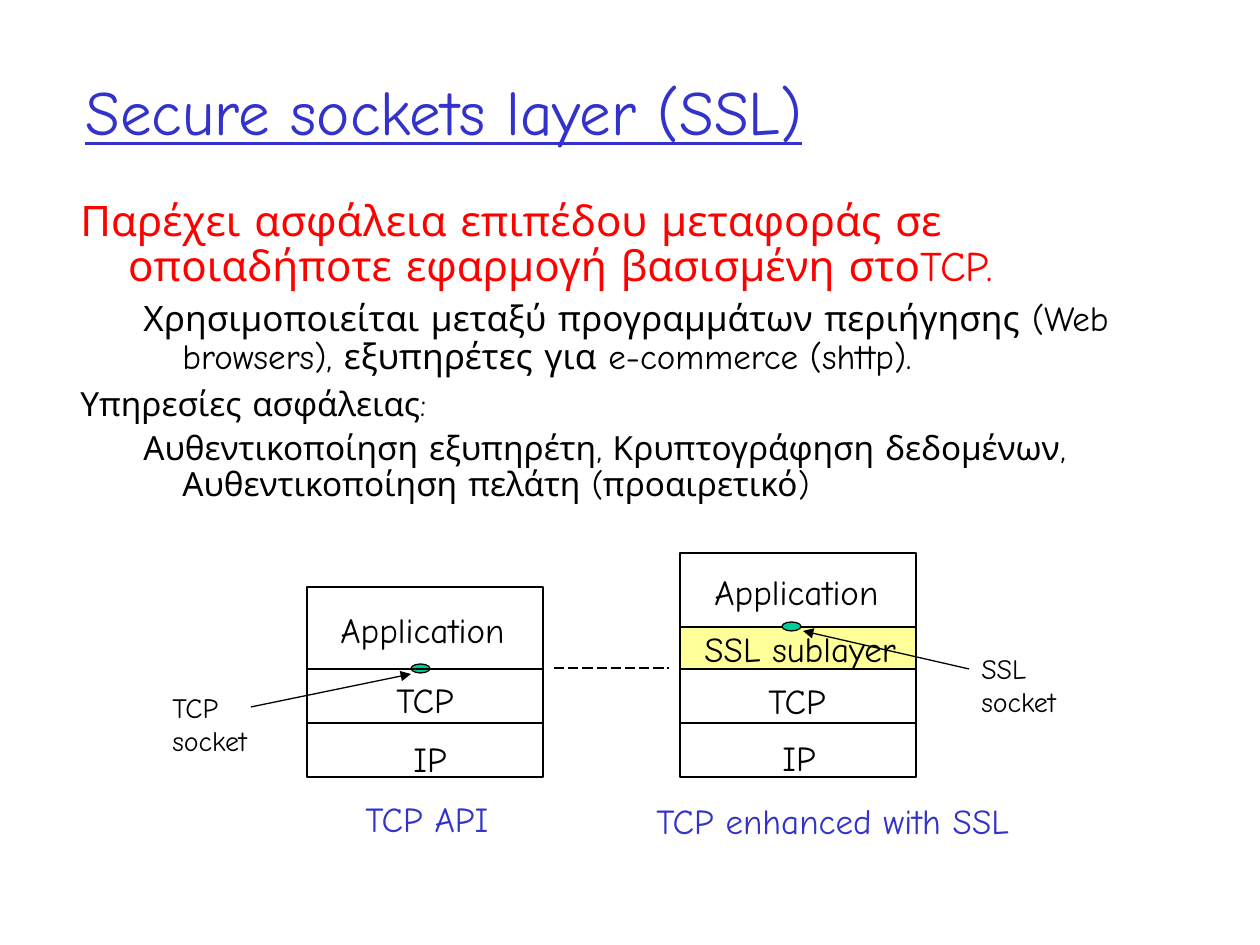
from lxml import etree
from pptx import Presentation, util as u
from pptx.dml.color import RGBColor
from pptx.enum import dml, shapes, text
from pptx.oxml.ns import qn

PX = 914400 // 126
FONT = "Comic Neue"
BLACK, BLUE, RED = "000000", "3333CC", "FF0000"
YELLOW, GREEN = "FFFF99", "00CC99"

TITLE = "Secure sockets layer (SSL)"
# wording, level, size, colour, space before
BODY = [
    ("Παρέχει ασφάλεια επιπέδου μεταφοράς σε οποιαδήποτε εφαρμογή "
     "βασισμένη στοTCP.", 0, 24, RED, 7),
    ("Χρησιμοποιείται μεταξύ προγραμμάτων περιήγησης (Web browsers), "
     "εξυπηρέτες για e-commerce (shttp).", 1, 20, BLACK, 6),
    ("Υπηρεσίες ασφάλειας:", 0, 19, BLACK, 6),
    ("Αυθεντικοποίηση εξυπηρέτη, Κρυπτογράφηση δεδομένων, "
     "Αυθεντικοποίηση πελάτη (προαιρετικό)", 1, 19, BLACK, 5),
]
INDENTS = [(0.38, -0.38), (0.81, -0.31)]  # left margin, first line, by level

# layer name, height, fill, place and width of its label
PLAIN = [
    ("Application", 82, None, (328, 602, 206)),
    ("TCP", 54, None, (384, 672, 88)),
    ("IP", 54, None, (401, 731, 63)),
]
SECURE = [
    ("Application", 74, None, (702, 564, 206)),
    ("SSL sublayer", 42, YELLOW, (692, 621, 242)),
    ("TCP", 54, None, (756, 673, 88)),
    ("IP", 54, None, (770, 730, 63)),
]
STACK_W, STACK_END = 236, 777
NOTES = [  # wording, left, top, width, size, colour
    ("TCP API", 353, 791, 160, 20, BLUE),
    ("TCP enhanced with SSL", 644, 793, 410, 20, BLUE),
    ("TCP\nsocket", 160, 684, 144, 16, BLACK),
    ("SSL\nsocket", 969, 645, 112, 16, BLACK),
]

prs = Presentation()
prs.slide_width, prs.slide_height = 1260 * PX, 945 * PX
slide = prs.slides.add_slide(prs.slide_layouts[6])
art = slide.shapes


def color(code):
    return RGBColor.from_string(code)


def frame(x, y, w, h):
    tf = art.add_textbox(x * PX, y * PX, w * PX, h * PX).text_frame
    tf.word_wrap = True
    return tf


def style(para, words, size=20, fill=BLACK, under=None):
    run = para.add_run()
    run.text = words
    font = run.font
    font.name, font.size, font.underline = FONT, u.Pt(size), under
    font.color.rgb = color(fill)


def write(words, x, y, w, h=54, anchor=text.MSO_ANCHOR.TOP, **form):
    tf = frame(x, y, w, h)
    tf.vertical_anchor = anchor
    for i, line in enumerate(words.split("\n")):
        style(tf.add_paragraph() if i else tf.paragraphs[0], line, **form)


def shape(kind, x, y, w, h, fill=None):
    item = art.add_shape(kind, x * PX, y * PX, w * PX, h * PX)
    item.shadow.inherit = False
    if fill:
        item.fill.solid()
        item.fill.fore_color.rgb = color(fill)
    else:
        item.fill.background()
    item.line.color.rgb, item.line.width = color(BLACK), u.Pt(0.75)


def socket(x, y):
    shape(shapes.MSO_SHAPE.OVAL, x, y, 19, 9, GREEN)


def link(x1, y1, x2, y2, arrow=True):
    """Draw an arrow, or a dashed line without a head."""
    item = art.add_connector(shapes.MSO_CONNECTOR.STRAIGHT,
                             x1 * PX, y1 * PX, x2 * PX, y2 * PX)
    item.line.color.rgb, item.line.width = color(BLACK), u.Pt(0.75)
    if arrow:
        etree.SubElement(item.line._get_or_add_ln(), qn("a:tailEnd"),
                         type="triangle")
    else:
        item.line.dash_style = dml.MSO_LINE.LONG_DASH
    etree.SubElement(item._element.spPr, qn("a:effectLst"))


def stack(x, layers):
    """Pile the layers so that the last one ends at the common base."""
    y = STACK_END - sum(layer[1] for layer in layers)
    for name, h, fill, (left, top, w) in layers:
        shape(shapes.MSO_SHAPE.RECTANGLE, x, y, STACK_W, h, fill)
        y += h
    for name, h, fill, (left, top, w) in layers:
        write(name, left, top, w)


write(TITLE, 73, 20, 1071, 180, anchor=text.MSO_ANCHOR.MIDDLE,
      size=36, fill=BLUE, under=True)

body = frame(68, 194, 1162, 640)
for i, (words, level, size, fill, gap) in enumerate(BODY):
    para = body.add_paragraph() if i else body.paragraphs[0]
    para.level, para.space_before, para.line_spacing = level, u.Pt(gap), 0.9
    margin, first = INDENTS[level]
    props = para._p.get_or_add_pPr()
    props.set("marL", str(u.Inches(margin)))
    props.set("indent", str(u.Inches(first)))
    style(para, words, size, fill)

socket(411, 664)
stack(307, PLAIN)
stack(680, SECURE)
socket(782, 622)

link(251, 707, 411, 674)
link(969, 669, 803, 631)
link(554, 668, 669, 668, arrow=False)

for words, x, y, w, size, fill in NOTES:
    write(words, x, y, w, size=size, fill=fill)

prs.save("out.pptx")
